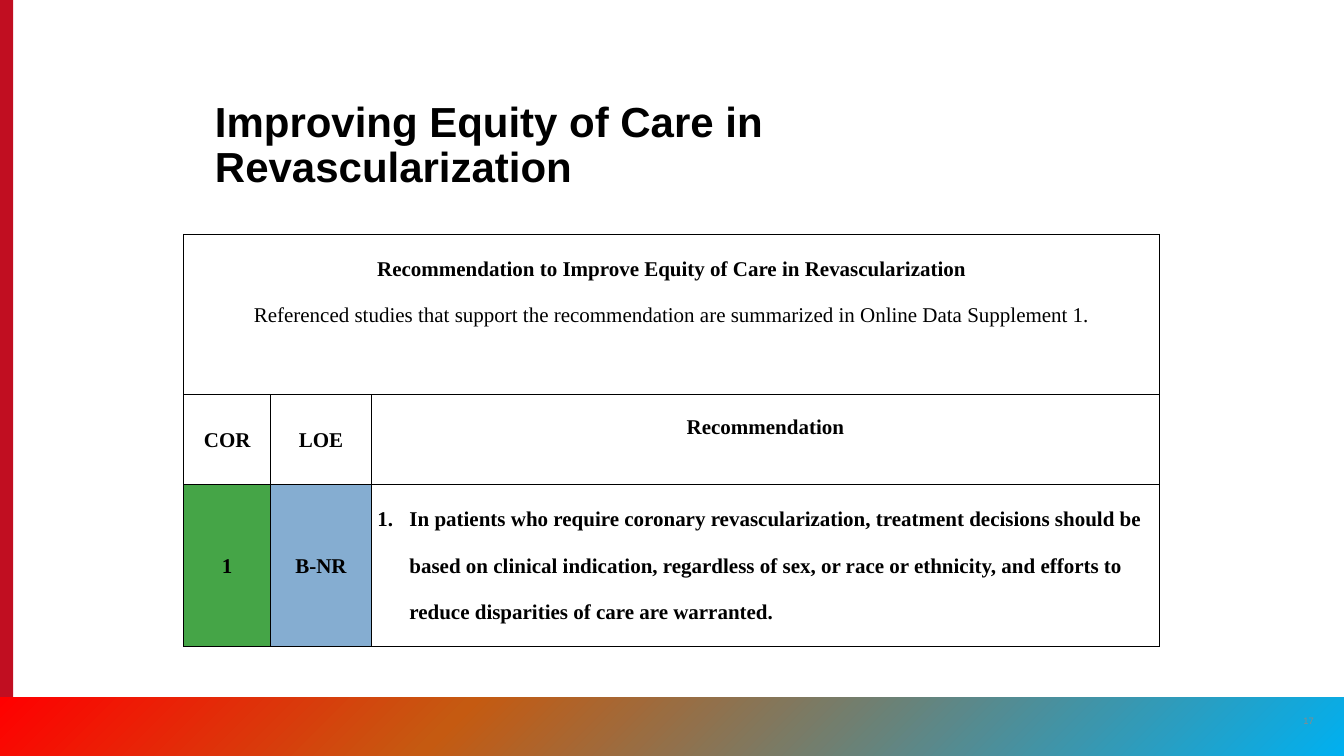
from copy import deepcopy
from dataclasses import dataclass

from lxml.etree import SubElement
from pptx import Presentation
from pptx.dml.color import RGBColor
from pptx.enum.shapes import MSO_SHAPE
from pptx.enum.text import MSO_ANCHOR, PP_ALIGN
from pptx.oxml import parse_xml
from pptx.oxml.ns import nsdecls, qn
from pptx.util import Cm, Pt

SERIF, SANS = "Times New Roman", "Arial"
SLIDE_W, SLIDE_H = 40.64, 22.86
BAND_TOP = 21.08


@dataclass
class CellText:
    row: int
    col: int
    lines: tuple[str, ...]
    fill: str = "FFFFFF"
    spacing: float = 1.07
    anchor: MSO_ANCHOR = MSO_ANCHOR.MIDDLE
    bottom: float = 0
    numbered: bool = False


CELLS = [
    CellText(0, 0, ("Recommendation to Improve Equity of Care in Revascularization",
                    "Referenced studies that support the recommendation are "
                    "summarized in Online Data Supplement 1."),
             spacing=2.0, anchor=MSO_ANCHOR.TOP),
    CellText(1, 0, ("COR",)),
    CellText(1, 1, ("LOE",)),
    CellText(1, 2, ("Recommendation",), bottom=0.78),
    CellText(2, 0, ("1",), fill="45A547"),
    CellText(2, 1, ("B-NR",), fill="85ADD1"),
    CellText(2, 2, ("In patients who require coronary revascularization, treatment "
                    "decisions should be based on clinical indication, regardless of "
                    "sex, or race or ethnicity, and efforts to reduce disparities of "
                    "care are warranted.",),
             spacing=2.0, anchor=MSO_ANCHOR.TOP, numbered=True),
]


def rgb(value: str) -> RGBColor:
    return RGBColor.from_string(value)


def write(p, text: str, *, size: float, font: str, color: str = "000000",
          bold: bool = False, align=PP_ALIGN.LEFT, spacing: float = 1.0) -> None:
    p.alignment = align
    p.line_spacing = spacing
    r = p.add_run()
    r.text = text
    r.font.size, r.font.name, r.font.bold = Pt(size), font, bold
    r.font.color.rgb = rgb(color)


def add_text(s, left: float, top: float, width: float, height: float,
             text: str, anchor: MSO_ANCHOR, **style) -> None:
    tf = s.shapes.add_textbox(Cm(left), Cm(top), Cm(width), Cm(height)).text_frame
    tf.word_wrap = True
    tf.vertical_anchor = anchor
    write(tf.paragraphs[0], text, **style)


def add_bar(s, left: float, top: float, width: float, height: float):
    sp = s.shapes.add_shape(MSO_SHAPE.RECTANGLE, Cm(left), Cm(top), Cm(width), Cm(height))
    sp.shadow.inherit = False
    sp.line.fill.background()
    return sp


def fill_gradient(sp, stops: list[tuple[float, str]], angle: float) -> None:
    fill = sp.fill
    fill.gradient()
    fill.gradient_angle = angle
    gs_list = sp.element.spPr.find(qn("a:gradFill")).find(qn("a:gsLst"))
    while len(gs_list) < len(stops):
        gs_list.append(deepcopy(gs_list[0]))
    for stop, (position, color) in zip(fill.gradient_stops, stops):
        stop.position = position
        stop.color.rgb = rgb(color)


def number_paragraph(p) -> None:
    pPr = p._p.get_or_add_pPr()
    pPr.set("marL", str(Cm(0.97)))
    pPr.set("indent", str(-Cm(0.97)))
    SubElement(pPr, qn("a:buFont"), typeface=SERIF)
    SubElement(pPr, qn("a:buAutoNum"), type="arabicPeriod")


def add_borders(cell) -> None:
    tcPr = cell._tc.get_or_add_tcPr()
    for i, side in enumerate(("lnL", "lnR", "lnT", "lnB")):
        tcPr.insert(i, parse_xml(
            f'<a:{side} {nsdecls("a")} w="{Pt(1)}"><a:solidFill>'
            f'<a:srgbClr val="000000"/></a:solidFill></a:{side}>'))


def fill_cell(cell, item: CellText) -> None:
    cell.vertical_anchor = item.anchor
    cell.margin_left = cell.margin_right = Cm(0.18)
    cell.margin_top, cell.margin_bottom = 0, Cm(item.bottom)
    tf = cell.text_frame
    for i, line in enumerate(item.lines):
        p = tf.add_paragraph() if i else tf.paragraphs[0]
        write(p, line, size=18, font=SERIF, bold=i == 0, spacing=item.spacing,
              align=PP_ALIGN.LEFT if item.numbered else PP_ALIGN.CENTER)
        if item.numbered:
            number_paragraph(p)


def add_recommendations(s) -> None:
    widths, heights = (2.62, 3.05, 23.83), (4.85, 2.72, 4.9)
    table = s.shapes.add_table(len(heights), len(widths), Cm(5.56), Cm(7.09),
                               Cm(sum(widths)), Cm(sum(heights))).table
    for column, width in zip(table.columns, widths):
        column.width = Cm(width)
    for row, height in zip(table.rows, heights):
        row.height = Cm(height)
    table.cell(0, 0).merge(table.cell(0, len(widths) - 1))
    fills = {(item.row, item.col): item.fill for item in CELLS}
    for r in range(len(heights)):
        for c in range(len(widths)):
            cell = table.cell(r, c)
            cell.fill.solid()
            cell.fill.fore_color.rgb = rgb(fills.get((r, c), "FFFFFF"))
            add_borders(cell)
    for item in CELLS:
        fill_cell(table.cell(item.row, item.col), item)


def main() -> None:
    prs = Presentation()
    prs.slide_width, prs.slide_height = Cm(SLIDE_W), Cm(SLIDE_H)
    s = prs.slides.add_slide(prs.slide_layouts[6])

    side_bar = add_bar(s, 0, 0, 0.4, SLIDE_H)
    side_bar.fill.solid()
    side_bar.fill.fore_color.rgb = rgb("C10E21")
    footer_band = add_bar(s, 0, BAND_TOP, SLIDE_W, SLIDE_H - BAND_TOP)
    fill_gradient(footer_band, [(0, "FF0000"), (0.34, "C55A11"), (1, "00B0F0")], 315)

    add_text(s, 6.25, 3.38, 27.9, 2.54, "Improving Equity of Care in Revascularization",
             MSO_ANCHOR.BOTTOM, size=36, font=SANS, bold=True, spacing=0.9)
    add_text(s, 38.96, 21.18, 1.22, 1.22, "17", MSO_ANCHOR.MIDDLE,
             size=8, font=SANS, color="8A8B8A", align=PP_ALIGN.CENTER)
    add_recommendations(s)
    prs.save("out.pptx")


if __name__ == "__main__":
    main()
